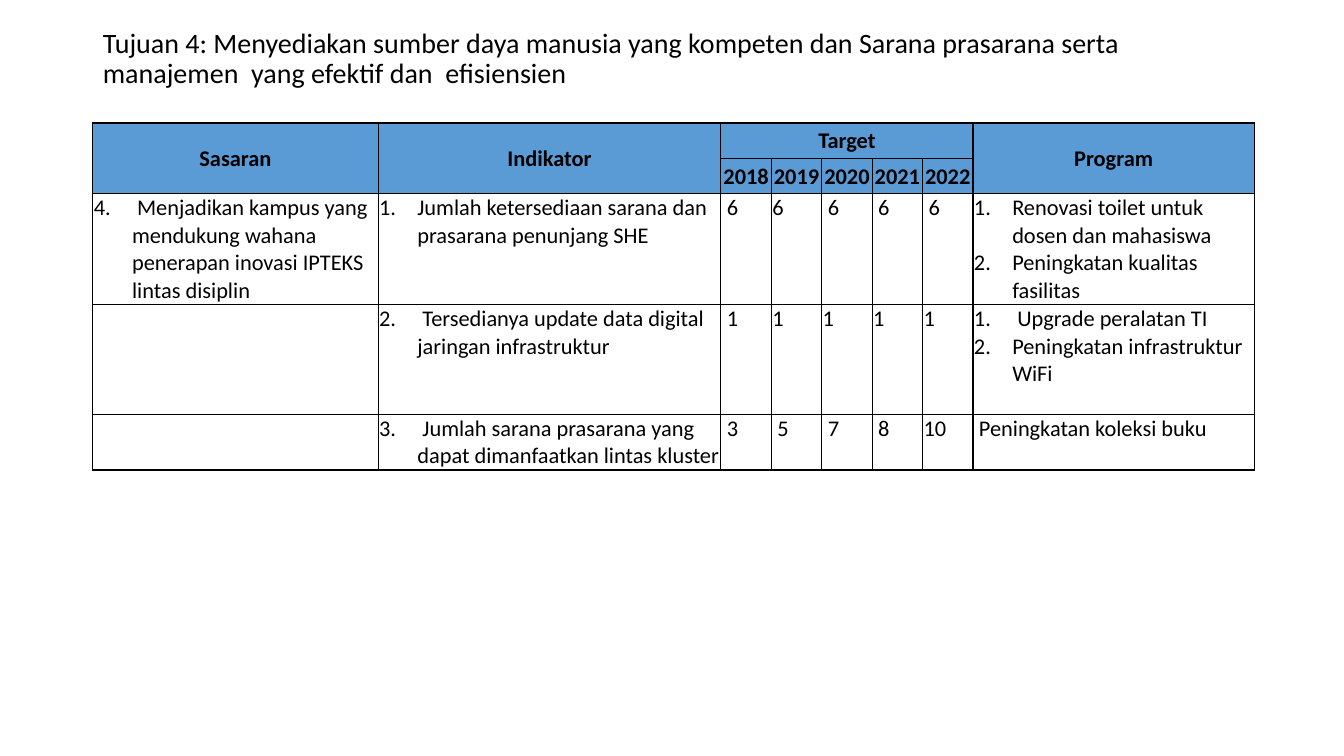
from pptx import Presentation
from pptx import util as u
from pptx.dml import color
from pptx.enum import text
from pptx.oxml import xmlchemy
from lxml import etree

BLACK = color.RGBColor(0x00, 0x00, 0x00)
HEADER_BLUE = color.RGBColor(0x5B, 0x9B, 0xD5)
DRAWING = "{http://schemas.openxmlformats.org/drawingml/2006/main}"
COLUMN_WIDTHS = [2.83, 3.4] + [0.5] * 5 + [2.79]
ROW_HEIGHTS = [0.35, 0.35, 1.1, 1.09, 0.55]
CELL_MARGINS = {"margin_left": 0.01, "margin_top": 0.01, "margin_right": 0.01, "margin_bottom": 0}
TITLE_BOX = {"left": 0.92, "top": 0.4, "width": 11.5, "height": 0.71}
TITLE_MARGINS = {"margin_left": 0.1, "margin_top": 0.05, "margin_right": 0.1, "margin_bottom": 0.38}
HEADER_FONT = {"name": "Calibri", "size": u.Pt(16), "bold": True}
BODY_FONT = {**HEADER_FONT, "bold": False}
TITLE_FONT = {"name": "Calibri", "size": u.Pt(20), "bold": False}

# Each cell holds its first list number (0 for plain text) and its paragraphs.
HEADERS = [
    ["Sasaran", "Indikator", "Target", "", "", "", "", "Program"],
    ["", "", "2018", "2019", "2020", "2021", "2022", ""],
]
GOALS = [
    [(4, [" Menjadikan kampus yang mendukung wahana penerapan inovasi IPTEKS lintas disiplin"]),
     (1, ["Jumlah ketersediaan sarana dan prasarana penunjang SHE"]),
     [" 6", "6 ", " 6", " 6", " 6"],
     (1, ["Renovasi toilet untuk dosen dan mahasiswa", "Peningkatan kualitas fasilitas"])],
    [(0, []),
     (2, [" Tersedianya update data digital jaringan infrastruktur"]),
     [" 1", "1 ", "1 ", "1 ", "1 "],
     (1, [" Upgrade peralatan TI", "Peningkatan infrastruktur WiFi"])],
    [(0, []),
     (3, [" Jumlah sarana prasarana yang dapat dimanfaatkan lintas kluster"]),
     [" 3", " 5", " 7", " 8", "10 "],
     (0, [" Peningkatan koleksi buku"])],
]


def format_font(font, values):
    for name, value in values.items():
        setattr(font, name, value)
    font.color.rgb = BLACK


def add_borders(cell):
    properties = cell._tc.get_or_add_tcPr()
    for side in ("lnL", "lnR", "lnT", "lnB"):
        line = etree.SubElement(properties, DRAWING + side, w=str(u.Pt(1)))
        fill = etree.SubElement(line, DRAWING + "solidFill")
        etree.SubElement(fill, DRAWING + "srgbClr", val=str(BLACK))


presentation = Presentation()
presentation.slide_width = u.Inches(13.33)
presentation.slide_height = u.Inches(7.5)
slide = presentation.slides.add_slide(presentation.slide_layouts[5])

title = slide.shapes.title
for name, value in TITLE_BOX.items():
    setattr(title, name, u.Inches(value))
frame = title.text_frame
for name, value in TITLE_MARGINS.items():
    setattr(frame, name, u.Inches(value))
frame.word_wrap = True
frame.auto_size = text.MSO_AUTO_SIZE.NONE
frame.vertical_anchor = text.MSO_ANCHOR.MIDDLE
frame.text = ("Tujuan 4: Menyediakan sumber daya manusia yang kompeten dan Sarana prasarana "
              "serta manajemen  yang efektif dan  efisiensien")
paragraph = frame.paragraphs[0]
paragraph.alignment = text.PP_ALIGN.LEFT
paragraph.line_spacing = 0.9
format_font(paragraph.font, TITLE_FONT)

table = slide.shapes.add_table(
    len(ROW_HEIGHTS), len(COLUMN_WIDTHS), u.Inches(0.92), u.Inches(1.22),
    u.Inches(sum(COLUMN_WIDTHS)), u.Inches(sum(ROW_HEIGHTS))).table
table.first_row = table.horz_banding = False
for column, width in zip(table.columns, COLUMN_WIDTHS):
    column.width = u.Inches(width)
for row, height in zip(table.rows, ROW_HEIGHTS):
    row.height = u.Inches(height)

for column in (0, 1, 7):
    table.cell(0, column).merge(table.cell(1, column))
table.cell(0, 2).merge(table.cell(0, 6))

rows = [[(0, [label] if label else []) for label in labels] for labels in HEADERS]
for goal, indicator, targets, program in GOALS:
    rows.append([goal, indicator] + [(0, [target]) for target in targets] + [program])

for row_index, row in enumerate(rows):
    is_header = row_index < len(HEADERS)
    for column_index, (start, lines) in enumerate(row):
        cell = table.cell(row_index, column_index)
        for name, value in CELL_MARGINS.items():
            setattr(cell, name, u.Inches(value))
        add_borders(cell)
        if is_header:
            cell.fill.solid()
            cell.fill.fore_color.rgb = HEADER_BLUE
            cell.vertical_anchor = text.MSO_ANCHOR.MIDDLE
        else:
            cell.fill.background()
        cell.text = "\n".join(lines)
        for paragraph in cell.text_frame.paragraphs:
            if start:
                properties = paragraph._p.get_or_add_pPr()
                properties.set("marL", str(u.Inches(0.38)))
                properties.set("indent", str(-u.Inches(0.38)))
                numbering = etree.SubElement(properties, DRAWING + "buAutoNum", type="arabicPeriod")
                if start > 1:
                    numbering.set("startAt", str(start))
            paragraph.alignment = text.PP_ALIGN.CENTER if is_header else text.PP_ALIGN.LEFT
            format_font(paragraph.font, HEADER_FONT if is_header else BODY_FONT)

presentation.save("out.pptx")
